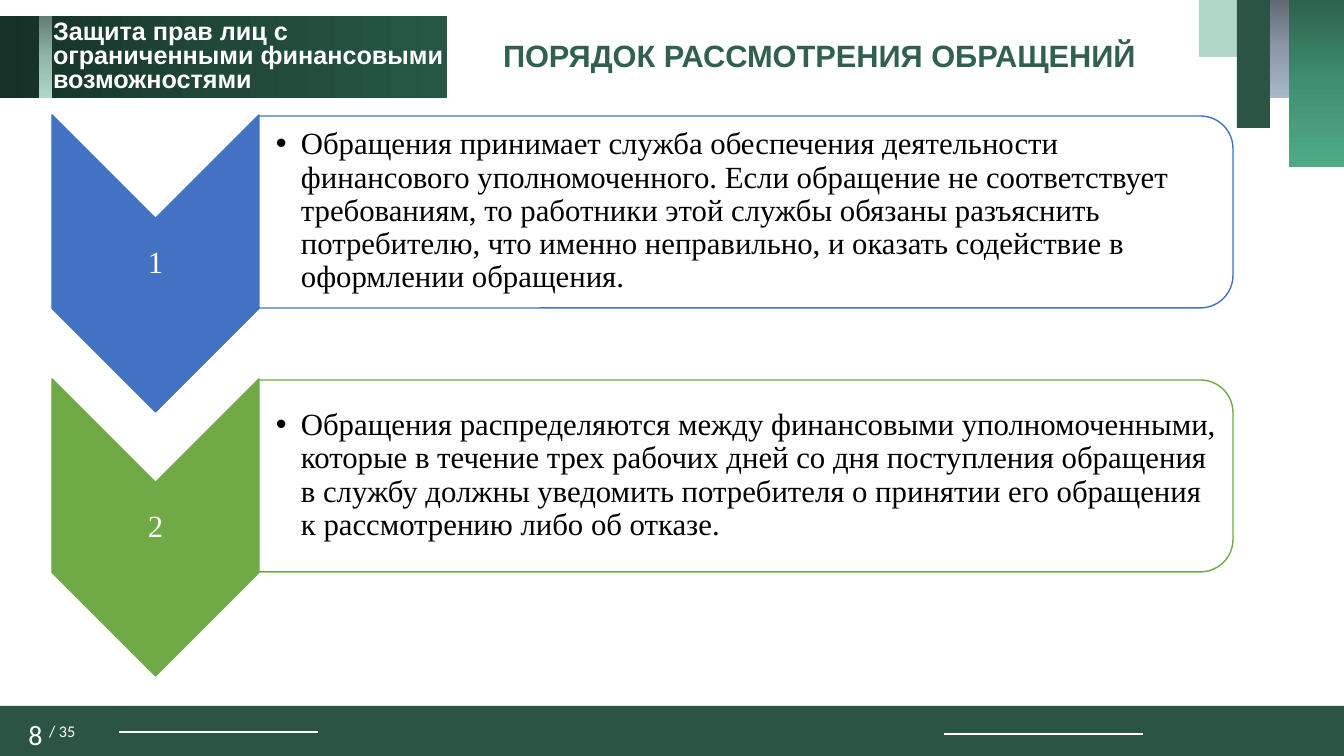
import pptx
import pptx.util
import pptx.dml.color
import pptx.enum.shapes
import pptx.enum.text
import pptx.oxml
import pptx.oxml.ns
from lxml import etree

RGBColor = pptx.dml.color.RGBColor
SHAPE = pptx.enum.shapes.MSO_SHAPE
ALIGN = pptx.enum.text.PP_ALIGN
ANCHOR = pptx.enum.text.MSO_ANCHOR

WHITE = RGBColor(0xFF, 0xFF, 0xFF)
BLACK = RGBColor(0, 0, 0)
DARK_GREEN = RGBColor(0x2B, 0x54, 0x44)
TITLE_GREEN = RGBColor(0x31, 0x61, 0x4E)
MINT = RGBColor(0xB1, 0xD7, 0xC9)
BLUE = RGBColor(0x43, 0x72, 0xC3)
GREEN = RGBColor(0x6F, 0xAA, 0x47)
SLATE_FADE = (RGBColor(0x61, 0x69, 0x75), RGBColor(0x8D, 0x98, 0xA9), RGBColor(0xA9, 0xB7, 0xCC))
GREEN_FADE = (RGBColor(0x2D, 0x62, 0x4E), RGBColor(0x41, 0x8F, 0x71), RGBColor(0x4E, 0xAB, 0x88))
HEADER_FADE = (RGBColor(0x16, 0x31, 0x27), RGBColor(0x20, 0x48, 0x38), RGBColor(0x27, 0x57, 0x44))
MINT_FADE = (RGBColor(0x64, 0x7D, 0x74), RGBColor(0x91, 0xB5, 0xA8), RGBColor(0xAE, 0xD9, 0xC9))

TITLE = "ПОРЯДОК РАССМОТРЕНИЯ ОБРАЩЕНИЙ"
SECTION = ["Защита прав лиц с\vограниченными финансовыми", "возможностями"]
PAGE, PAGE_TOTAL = "8 ", "/ 35"
STEPS = [
    ("1", BLUE,
     "Обращения принимает служба обеспечения деятельности финансового уполномоченного. "
     "Если обращение не соответствует требованиям, то работники этой службы обязаны "
     "разъяснить потребителю, что именно неправильно, и оказать содействие в оформлении "
     "обращения."),
    ("2", GREEN,
     "Обращения распределяются между финансовыми уполномоченными, которые в течение трех "
     "рабочих дней со дня поступления обращения в службу должны уведомить потребителя о "
     "принятии его обращения к рассмотрению либо об отказе."),
]

# left, top, width, height, solid colour or gradient stops, gradient angle
BARS = [
    (0, 706, 1344, 50, DARK_GREEN, None),
    (1269, 0, 20, 98, SLATE_FADE, 90),
    (1289, 0, 55, 167, GREEN_FADE, 90),
    (1199, 0, 38, 57, MINT, None),
    (1237, 0, 33, 128, DARK_GREEN, None),
    (0, 16, 447, 82, HEADER_FADE, 0),
    (39, 16, 13, 82, MINT_FADE, 90),
]
FOOTER_LINES = [(119, 732), (944, 734)]
FOOTER_LINE_WIDTH = 199

SLIDE_WIDTH, SLIDE_HEIGHT = 1344, 756
STEP_TOP, STEP_PITCH = 115, 264
CHEVRON_LEFT, CHEVRON_WIDTH, CHEVRON_HEIGHT = 52, 207, 297
PANEL_WIDTH, PANEL_HEIGHT = 974, 192
BULLET_INDENT = 25
EMU_PER_PX = 12192000 / SLIDE_WIDTH


def px(length):
    return pptx.util.Emu(round(length * EMU_PER_PX))


def add_shape(slide, kind, left, top, width, height):
    shape = slide.shapes.add_shape(kind, px(left), px(top), px(width), px(height))
    shape.shadow.inherit = False
    shape.line.fill.background()
    return shape


def add_turned_shape(slide, kind, left, top, width, height):
    """Add a shape turned by 90 degrees that shows inside the given box."""
    shift = (width - height) / 2
    shape = add_shape(slide, kind, left + shift, top - shift, height, width)
    shape.rotation = 90
    return shape


def set_solid(fill, color):
    fill.solid()
    fill.fore_color.rgb = color


def set_gradient(shape, colors, angle):
    """Fill with evenly spaced stops; the angle runs clockwise from left to right."""
    shape.fill.gradient()
    gradient = shape.fill._xPr.find(pptx.oxml.ns.qn("a:gradFill"))
    stops = "".join(
        f'<a:gs pos="{100000 * index // (len(colors) - 1)}"><a:srgbClr val="{color}"/></a:gs>'
        for index, color in enumerate(colors))
    new_gradient = pptx.oxml.parse_xml(
        f'<a:gradFill {pptx.oxml.ns.nsdecls("a")} rotWithShape="1"><a:gsLst>{stops}</a:gsLst>'
        f'<a:lin ang="{angle * 60000}" scaled="0"/></a:gradFill>')
    gradient.getparent().replace(gradient, new_gradient)


def add_bullet(paragraph):
    properties = paragraph._p.get_or_add_pPr()
    properties.set("marL", str(px(BULLET_INDENT)))
    properties.set("indent", str(-px(BULLET_INDENT)))
    color = etree.SubElement(properties, pptx.oxml.ns.qn("a:buClr"))
    etree.SubElement(color, pptx.oxml.ns.qn("a:srgbClr"), val=str(BLACK))
    etree.SubElement(properties, pptx.oxml.ns.qn("a:buFont"), typeface="Arial")
    etree.SubElement(properties, pptx.oxml.ns.qn("a:buChar"), char="•")


def write(shape, lines, font, size, color, bold=False, align=ALIGN.LEFT, spacing=1.0,
          anchor=ANCHOR.TOP, margins=(10, 5, 10, 5), bullet=False):
    frame = shape.text_frame
    frame.word_wrap = True
    frame.auto_size = pptx.enum.text.MSO_AUTO_SIZE.NONE
    frame.vertical_anchor = anchor
    (frame.margin_left, frame.margin_top,
     frame.margin_right, frame.margin_bottom) = map(px, margins)
    frame.text = "\n".join(lines)
    for paragraph in frame.paragraphs:
        if bullet:
            add_bullet(paragraph)
        paragraph.alignment = align
        paragraph.line_spacing = spacing
        paragraph.font.name = font
        paragraph.font.size = pptx.util.Pt(size)
        paragraph.font.bold = bold
        paragraph.font.color.rgb = color


def add_text(slide, left, top, width, height, lines, *style, **options):
    box = slide.shapes.add_textbox(px(left), px(top), px(width), px(height))
    write(box, lines, *style, **options)
    return box


def add_title(slide):
    title = slide.shapes.title
    title.left, title.top, title.width, title.height = map(px, (493, 32, 660, 47))
    write(title, [TITLE], "Arial", 22, TITLE_GREEN, bold=True)


def add_frame(slide):
    """Add the bars, the section name and the footer."""
    for left, top, width, height, fill, angle in BARS:
        bar = add_shape(slide, SHAPE.RECTANGLE, left, top, width, height)
        if angle is None:
            set_solid(bar.fill, fill)
        else:
            set_gradient(bar, fill, angle)
    for left, top in FOOTER_LINES:
        line = slide.shapes.add_connector(
            pptx.enum.shapes.MSO_CONNECTOR.STRAIGHT,
            px(left), px(top), px(left + FOOTER_LINE_WIDTH), px(top))
        line.line.color.rgb = WHITE
        line.line.width = pptx.util.Pt(1.5)
        etree.SubElement(line._element.spPr, pptx.oxml.ns.qn("a:effectLst"))
    add_text(slide, 43, 16, 415, 61, SECTION, "Arial", 18, WHITE, bold=True, spacing=0.8)
    number = add_text(slide, 0, 719, 104, 38, [PAGE], "Calibri", 20, WHITE,
                      align=ALIGN.CENTER, spacing=0.8)
    total = number.text_frame.paragraphs[0].add_run()
    total.text = PAGE_TOTAL
    total.font._element.set("baseline", "30000")


def add_step(slide, top, number, color, text):
    chevron = add_turned_shape(slide, SHAPE.CHEVRON, CHEVRON_LEFT, top,
                               CHEVRON_WIDTH, CHEVRON_HEIGHT)
    chevron.adjustments[0] = 0.5
    panel_left = CHEVRON_LEFT + CHEVRON_WIDTH
    panel = add_turned_shape(slide, SHAPE.ROUND_2_SAME_RECTANGLE, panel_left, top + 1,
                             PANEL_WIDTH, PANEL_HEIGHT)
    panel.adjustments[0] = 0.17
    panel.adjustments[1] = 0
    for shape, fill in ((chevron, color), (panel, WHITE)):
        set_solid(shape.fill, fill)
        shape.line.color.rgb = color
        shape.line.width = pptx.util.Pt(1)
    style = {"spacing": 0.9, "anchor": ANCHOR.MIDDLE}
    add_text(slide, CHEVRON_LEFT, top + 105, CHEVRON_WIDTH, 88, [number], "Times New Roman",
             22, WHITE, align=ALIGN.CENTER, margins=(2, 2, 2, 2), **style)
    add_text(slide, panel_left, top + 10, PANEL_WIDTH - 9, 173, [text], "Times New Roman",
             22, BLACK, margins=(17, 2, 2, 2), bullet=True, **style)


def main():
    presentation = pptx.Presentation()
    presentation.slide_width = px(SLIDE_WIDTH)
    presentation.slide_height = px(SLIDE_HEIGHT)
    slide = presentation.slides.add_slide(presentation.slide_layouts[5])
    add_title(slide)
    add_frame(slide)
    for index, step in enumerate(STEPS):
        add_step(slide, STEP_TOP + index * STEP_PITCH, *step)
    presentation.save("out.pptx")


if __name__ == "__main__":
    main()
